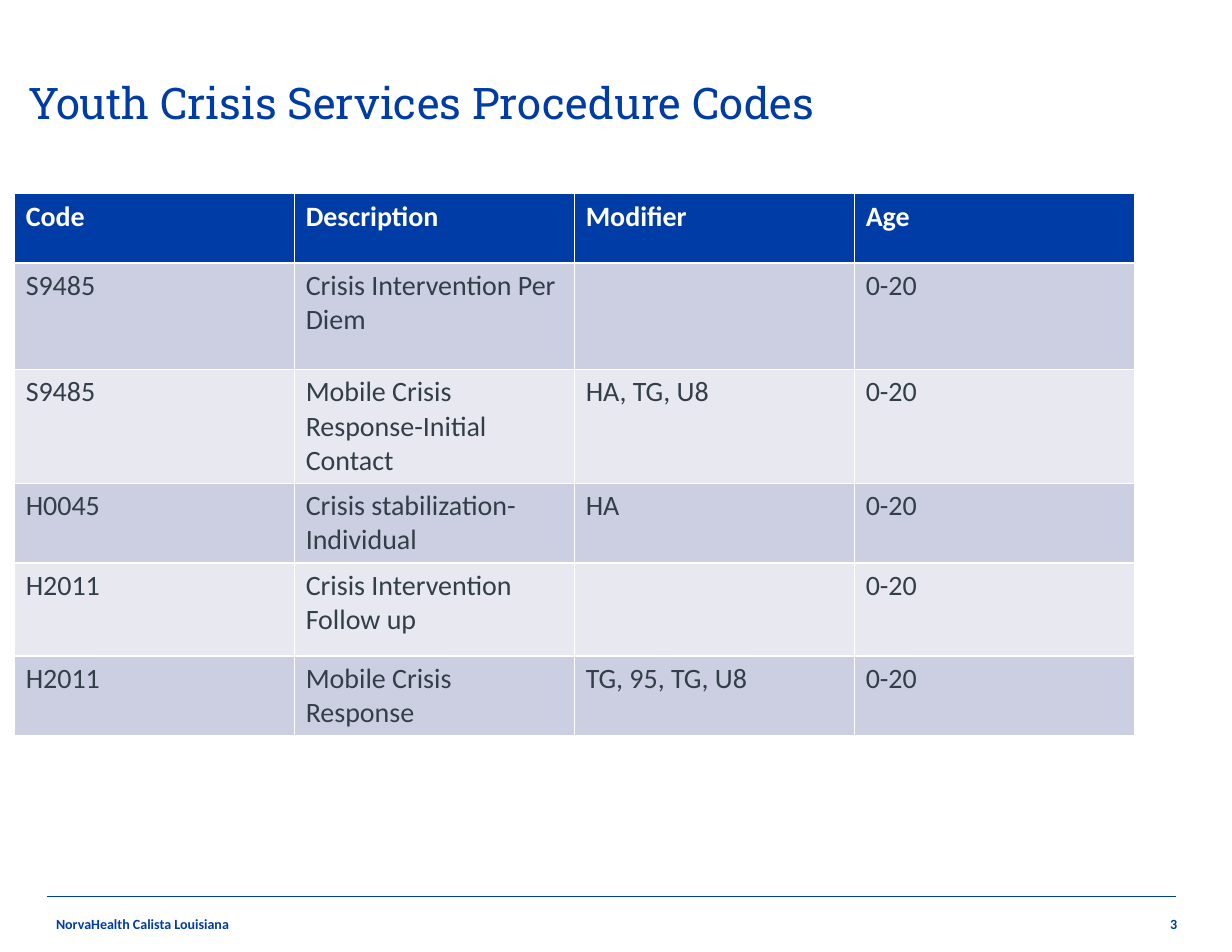
from pptx import Presentation
from pptx.dml.color import RGBColor
from pptx.enum.shapes import MSO_CONNECTOR
from pptx.enum.text import MSO_ANCHOR, MSO_AUTO_SIZE, PP_ALIGN
from pptx.oxml.ns import qn
from pptx.util import Inches, Pt
from lxml.etree import SubElement

BLUE = RGBColor(0x00, 0x3C, 0xA5)
SLATE = RGBColor(0x33, 0x3F, 0x48)
WHITE = RGBColor(0xFF, 0xFF, 0xFF)
BANDS = (RGBColor(0xCC, 0xCE, 0xE1), RGBColor(0xE7, 0xE8, 0xF0))

TITLE = "Youth Crisis Services Procedure Codes"
ORGANIZATION = "NorvaHealth Calista Louisiana"
PAGE = "3"
HEADINGS = ("Code", "Description", "Modifier", "Age")
AGES = "0-20"
SERVICES = [
    ("S9485", "Crisis Intervention Per Diem", ""),
    ("S9485", "Mobile Crisis Response-Initial Contact", "HA, TG, U8"),
    ("H0045", "Crisis stabilization-Individual", "HA"),
    ("H2011", "Crisis Intervention Follow up", ""),
    ("H2011", "Mobile Crisis Response", "TG, 95, TG, U8"),
]
ROW_HEIGHTS = (0.62, 0.95, 0.95, 0.7, 0.83, 0.71)
COLUMN_WIDTH = 2.5
TABLE_LEFT, TABLE_TOP = 0.13, 1.73
FOOTER_TOP, FOOTER_HEIGHT = 8, 0.5


def style_font(paragraph, name, size, color, bold=False):
    for run in paragraph.runs:
        run.font.name = name
        run.font.size = Pt(size)
        run.font.bold = bold
        run.font.color.rgb = color


def fill_frame(frame, text, align=PP_ALIGN.LEFT):
    frame.text = text
    frame.word_wrap = True
    frame.auto_size = MSO_AUTO_SIZE.NONE
    frame.vertical_anchor = MSO_ANCHOR.MIDDLE
    frame.margin_left = frame.margin_right = 0
    frame.margin_top = frame.margin_bottom = 0
    paragraph = frame.paragraphs[0]
    paragraph.alignment = align
    return paragraph


def add_title(slide):
    title = slide.shapes.title
    title.left, title.top = Inches(0.25), Inches(0.5)
    title.width, title.height = Inches(9.77), Inches(0.89)
    paragraph = fill_frame(title.text_frame, TITLE)
    paragraph.line_spacing = 0.9
    style_font(paragraph, "Roboto Slab", 28, BLUE)


def add_footer(slide):
    for text, left, width, align in (
        (ORGANIZATION, 0.5, 3.71, PP_ALIGN.LEFT),
        (PAGE, 8.03, 2.48, PP_ALIGN.RIGHT),
    ):
        label = slide.shapes.add_textbox(
            Inches(left), Inches(FOOTER_TOP), Inches(width), Inches(FOOTER_HEIGHT))
        paragraph = fill_frame(label.text_frame, text, align)
        style_font(paragraph, "Calibri", 9, BLUE, True)
    rule = slide.shapes.add_connector(
        MSO_CONNECTOR.STRAIGHT,
        Inches(0.42), Inches(FOOTER_TOP), Inches(10.5), Inches(FOOTER_TOP))
    rule.line.color.rgb = BLUE
    rule.line.width = Pt(0.5)
    SubElement(rule.element.spPr, qn("a:effectLst"))


def add_codes(slide):
    rows = [HEADINGS] + [(*service, AGES) for service in SERVICES]
    codes = slide.shapes.add_table(
        len(rows), len(HEADINGS), Inches(TABLE_LEFT), Inches(TABLE_TOP),
        Inches(COLUMN_WIDTH * len(HEADINGS)), Inches(sum(ROW_HEIGHTS))).table
    for column in codes.columns:
        column.width = Inches(COLUMN_WIDTH)
    for r, (values, height) in enumerate(zip(rows, ROW_HEIGHTS)):
        heading = r == 0
        codes.rows[r].height = Inches(height)
        for cell, value in zip(codes.rows[r].cells, values):
            cell.fill.solid()
            cell.fill.fore_color.rgb = BLUE if heading else BANDS[(r - 1) % 2]
            cell.text_frame.text = value
            style_font(cell.text_frame.paragraphs[0], "Calibri", 18,
                       WHITE if heading else SLATE, heading)


def main():
    deck = Presentation()
    deck.slide_width, deck.slide_height = Inches(11), Inches(8.5)
    slide = deck.slides.add_slide(deck.slide_layouts.get_by_name("Title Only"))
    add_title(slide)
    add_footer(slide)
    add_codes(slide)
    deck.save("out.pptx")


if __name__ == "__main__":
    main()
